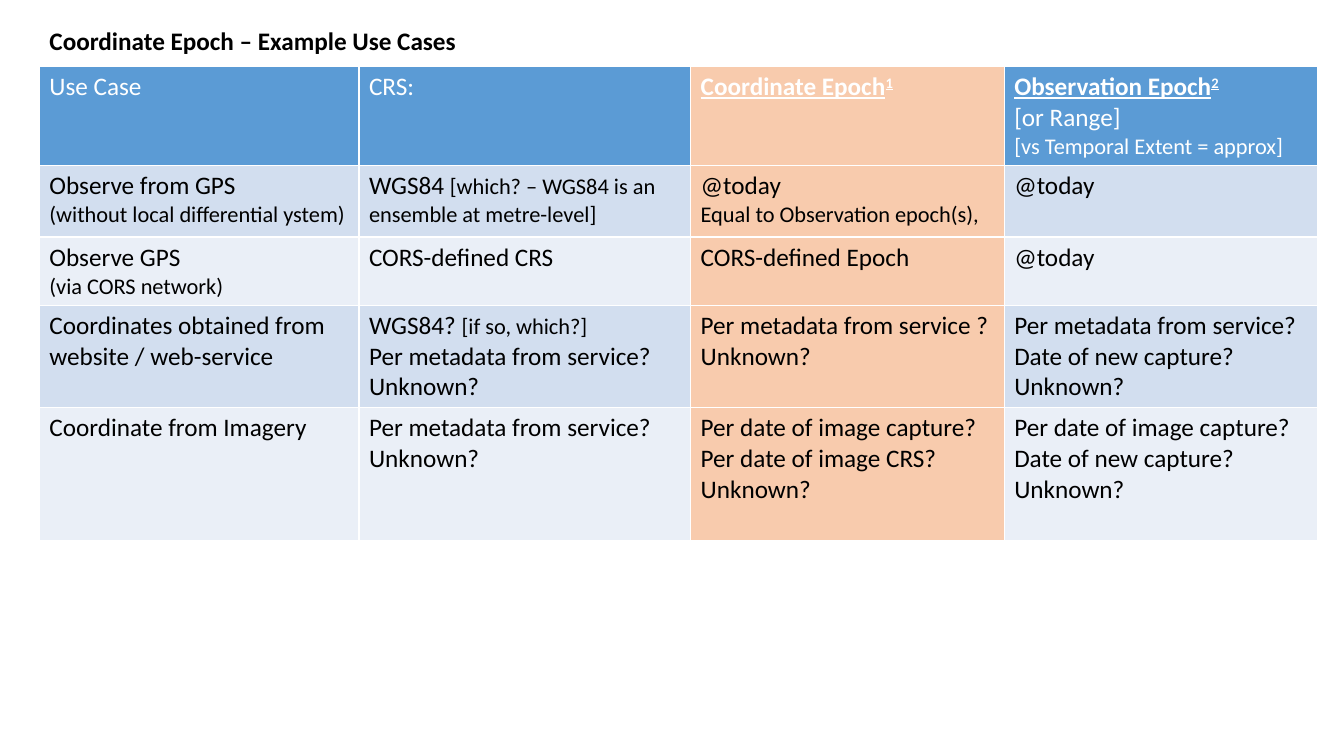
import pptx
import pptx.dml.color
import pptx.enum.text
import pptx.util

RGB = pptx.dml.color.RGBColor
WHITE = RGB(0xFF, 0xFF, 0xFF)
BLACK = RGB(0x00, 0x00, 0x00)
BLUE = RGB(0x5B, 0x9B, 0xD5)
PEACH = RGB(0xF8, 0xCB, 0xAD)
BANDS = [RGB(0xD2, 0xDE, 0xEF), RGB(0xEA, 0xEF, 0xF7)]
FONT = "Calibri"

TITLE = "Coordinate Epoch – Example Use Cases"
# Run styles: size, heading (bold and underlined), raised
BODY = (18, False, False)
SMALL = (16, False, False)
HEAD = (18, True, False)
RAISED = (18, True, True)

# A cell is a list of lines; a line is plain text or a list of styled runs.
ROWS = [
    [
        ["Use Case"],
        ["CRS:"],
        [[("Coordinate Epoch", HEAD), ("1", RAISED)]],
        [
            [("Observation Epoch", HEAD), ("2", RAISED)],
            "[or Range]",
            [("[vs Temporal Extent = approx]", SMALL)],
        ],
    ],
    [
        ["Observe from GPS", [("(without local differential ystem)", SMALL)]],
        [[("WGS84 ", BODY),
          ("[which? – WGS84 is an ensemble at metre-level]", SMALL)]],
        ["@today", [("Equal to Observation epoch(s),", SMALL)]],
        ["@today"],
    ],
    [
        ["Observe GPS", [("(via CORS network)", SMALL)]],
        ["CORS-defined CRS"],
        ["CORS-defined Epoch"],
        ["@today"],
    ],
    [
        ["Coordinates obtained from website / web-service"],
        [[("WGS84? ", BODY), ("[if so, which?]", SMALL)],
         "Per metadata from service?", "Unknown?"],
        ["Per metadata from service ?", "Unknown?"],
        ["Per metadata from service?", "Date of new capture?", "Unknown?"],
    ],
    [
        ["Coordinate from Imagery"],
        ["Per metadata from service?", "Unknown?"],
        ["Per date of image capture?", "Per date of image CRS?", "Unknown?"],
        ["Per date of image capture?", "Date of new capture?", "Unknown?"],
    ],
]
WIDTHS = [3.17, 3.29, 3.11, 3.11]
HEIGHTS = [0.97, 0.71, 0.67, 1.01, 1.32]
LEFT, TOP = 0.39, 0.66
EPOCH = 2  # highlighted column

inch = pptx.util.Inches


def add_title(slide):
    title = slide.shapes.title
    title.left, title.top = inch(LEFT), inch(0.2)
    title.width, title.height = inch(4.24), inch(0.4)
    frame = title.text_frame
    frame.text = TITLE
    frame.word_wrap = False
    frame.auto_size = pptx.enum.text.MSO_AUTO_SIZE.NONE
    frame.vertical_anchor = pptx.enum.text.MSO_ANCHOR.TOP
    para = frame.paragraphs[0]
    para.alignment = pptx.enum.text.PP_ALIGN.LEFT
    para.font.name, para.font.size = FONT, pptx.util.Pt(18)
    para.font.bold = True
    para.font.color.rgb = BLACK


def add_line(para, line, color):
    para.font.name = FONT
    para.font.color.rgb = color
    runs = [(line, BODY)] if isinstance(line, str) else line
    for text, (size, head, high) in runs:
        run = para.add_run()
        run.text = text
        run.font.size = pptx.util.Pt(size)
        run.font.bold = run.font.underline = head
        if high:
            run.font._element.set("baseline", "30000")


def fill_cell(cell, lines, row, col):
    cell.fill.solid()
    base = BANDS[(row - 1) % 2] if row else BLUE
    cell.fill.fore_color.rgb = PEACH if col == EPOCH else base
    frame = cell.text_frame
    for num, line in enumerate(lines):
        para = frame.add_paragraph() if num else frame.paragraphs[0]
        add_line(para, line, BLACK if row else WHITE)


def add_grid(slide):
    frame = slide.shapes.add_table(
        len(ROWS), len(WIDTHS), inch(LEFT), inch(TOP),
        inch(sum(WIDTHS)), inch(sum(HEIGHTS)))
    table = frame.table
    for col, width in zip(table.columns, WIDTHS):
        col.width = inch(width)
    for row, height in zip(table.rows, HEIGHTS):
        row.height = inch(height)
    for row, cells in enumerate(ROWS):
        for col, lines in enumerate(cells):
            fill_cell(table.cell(row, col), lines, row, col)


def main():
    deck = pptx.Presentation()
    deck.slide_width, deck.slide_height = inch(13.33), inch(7.5)
    slide = deck.slides.add_slide(deck.slide_layouts[5])
    add_title(slide)
    add_grid(slide)
    deck.save("out.pptx")


if __name__ == "__main__":
    main()
